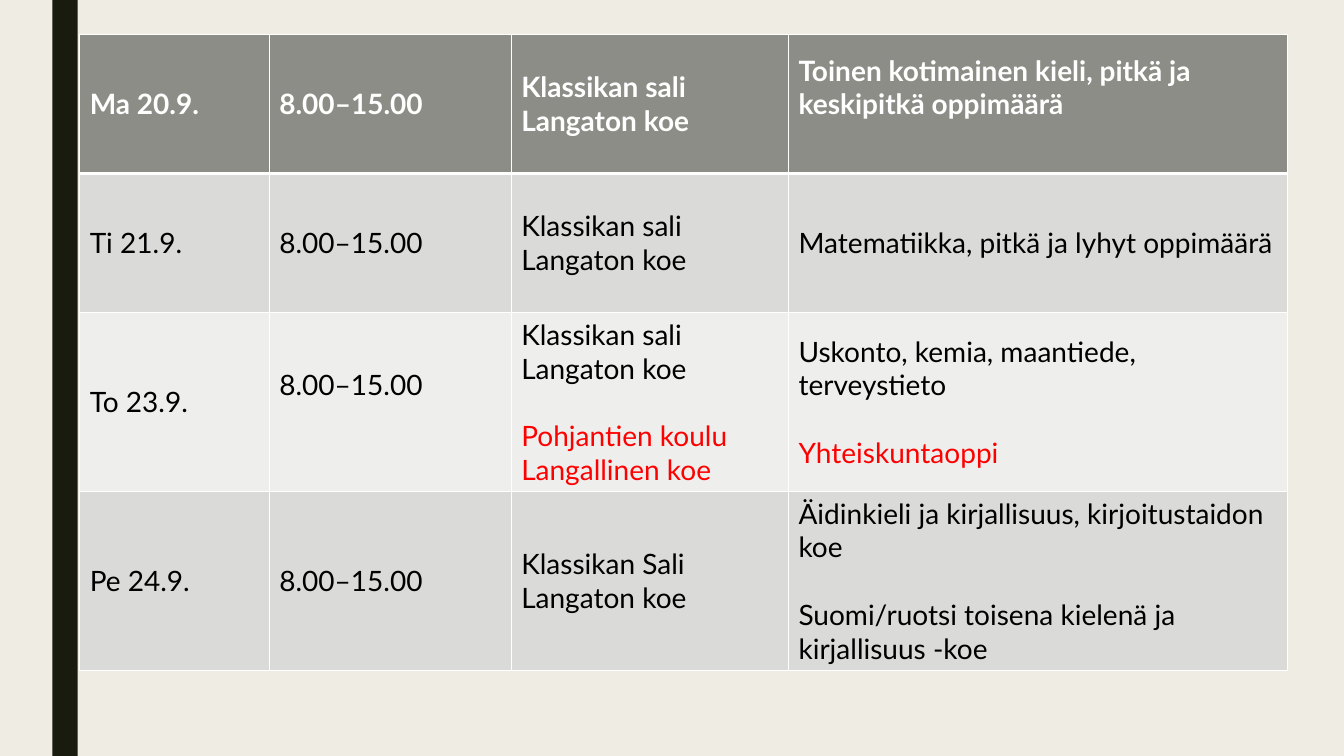
from lxml.etree import SubElement
from pptx import Presentation
from pptx.dml.color import RGBColor
from pptx.enum.shapes import MSO_SHAPE
from pptx.enum.text import MSO_ANCHOR
from pptx.oxml.ns import qn
from pptx.util import Inches, Pt

COLORS = {
    "background": "EFEDE3", "stripe": "191B0E", "header": "8C8D86",
    "dark band": "DADBD9", "light band": "EEEEED",
    "white": "FFFFFF", "black": "000000", "red": "FF0000",
}
FONT_SIZE = 20
LINE_HEIGHT = 24
TIME = "8.00–15.00"
HALL = ["Klassikan sali", "Langaton koe"]

# Each cell holds groups of paragraphs; groups are one line apart
SCHEDULE = [
    [[["Ma 20.9."]], [[TIME]], [HALL],
     [["Toinen kotimainen kieli, pitkä ja keskipitkä oppimäärä"]]],
    [[["Ti 21.9."]], [[TIME]], [HALL],
     [["Matematiikka, pitkä ja lyhyt oppimäärä"]]],
    [[["To 23.9."]], [[TIME]],
     [HALL, ["Pohjantien koulu", "Langallinen koe"]],
     [["Uskonto, kemia, maantiede, terveystieto"], ["Yhteiskuntaoppi"]]],
    [[["Pe 24.9."]], [[TIME]], [["Klassikan Sali", "Langaton koe"]],
     [["Äidinkieli ja kirjallisuus, kirjoitustaidon koe"],
      ["Suomi/ruotsi toisena kielenä ja kirjallisuus -koe"]]],
]
COLUMN_WIDTHS = [1.88, 2.4, 2.75, 4.95]
ROW_HEIGHTS = [1.38, 1.38, 1.77, 1.77]
ROW_FILLS = ["header", "dark band", "light band", "dark band"]
WIRED_ROW = 2
RAISED_CELLS = {(0, 3), (2, 1)}


def color(name):
    return RGBColor.from_string(COLORS[name])


def add_border(cell, side, points):
    line = SubElement(cell._tc.get_or_add_tcPr(), qn(f"a:ln{side}"), w=str(Pt(points)))
    fill = SubElement(line, qn("a:solidFill"))
    SubElement(fill, qn("a:srgbClr"), val=COLORS["white"])


# Slide and background
deck = Presentation()
deck.slide_width = Inches(13.33)
deck.slide_height = Inches(7.5)
page = deck.slides.add_slide(deck.slide_layouts[6])
page.background.fill.solid()
page.background.fill.fore_color.rgb = color("background")

# Dark stripe on the left
stripe = page.shapes.add_shape(
    MSO_SHAPE.RECTANGLE, Inches(0.52), 0, Inches(0.25), Inches(7.5))
stripe.shadow.inherit = False
stripe.fill.solid()
stripe.fill.fore_color.rgb = color("stripe")
stripe.line.fill.background()

# Exam timetable
table = page.shapes.add_table(
    len(ROW_HEIGHTS), len(COLUMN_WIDTHS), Inches(0.79), Inches(0.34),
    Inches(sum(COLUMN_WIDTHS)), Inches(sum(ROW_HEIGHTS))).table
for column, width in zip(table.columns, COLUMN_WIDTHS):
    column.width = Inches(width)
for row, height in zip(table.rows, ROW_HEIGHTS):
    row.height = Inches(height)

for row_index, row_cells in enumerate(SCHEDULE):
    is_header = row_index == 0
    for column_index, groups in enumerate(row_cells):
        cell = table.cell(row_index, column_index)
        cell.vertical_anchor = MSO_ANCHOR.MIDDLE
        if (row_index, column_index) in RAISED_CELLS:
            cell.margin_bottom = Inches(0.05) + Pt(LINE_HEIGHT)

        # Borders, heavier below the header, then the fill
        for side in "LRTB":
            heavy = (row_index, side) in {(0, "B"), (1, "T")}
            add_border(cell, side, 3 if heavy else 1)
        cell.fill.solid()
        cell.fill.fore_color.rgb = color(ROW_FILLS[row_index])

        # Text, with the wired exams in red
        frame = cell.text_frame
        frame.text = "\n".join(line for group in groups for line in group)
        second_group = len(groups[0])
        for para_index, para in enumerate(frame.paragraphs):
            if para_index == second_group:
                para.space_before = Pt(LINE_HEIGHT)
            wired = row_index == WIRED_ROW and para_index >= second_group
            for span in para.runs:
                span.font.name = "Lato"
                span.font.size = Pt(FONT_SIZE)
                span.font.bold = is_header
                span.font.color.rgb = color(
                    "white" if is_header else "red" if wired else "black")

deck.save("out.pptx")
